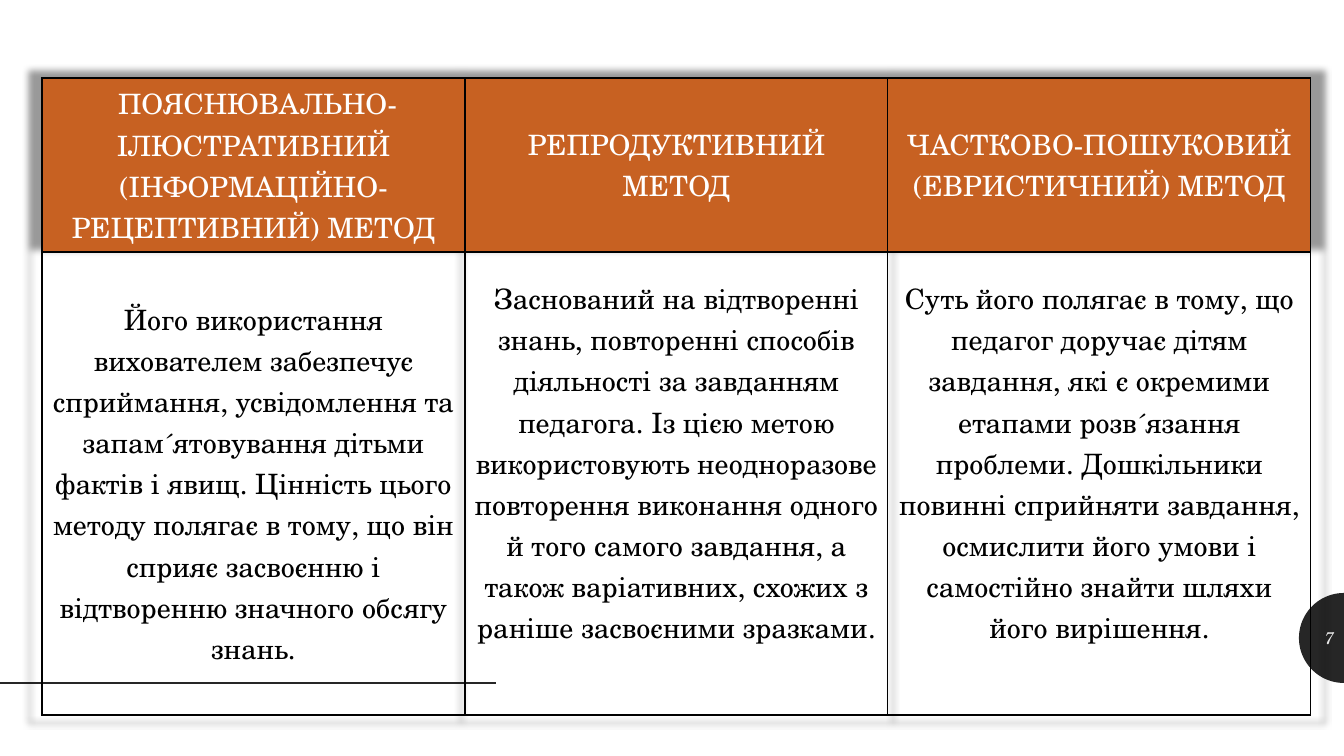
"""Build a slide with a table that compares three teaching methods."""
import math

import pptx
import pptx.chart.data
import pptx.dml.color
import pptx.enum.text
import pptx.oxml
import pptx.oxml.ns
import pptx.util

RGB = pptx.dml.color.RGBColor
ORANGE = RGB(0xC7, 0x61, 0x22)
DARK = RGB(0x26, 0x26, 0x26)
BLACK = RGB(0, 0, 0)
WHITE = RGB(0xFF, 0xFF, 0xFF)
PALE = RGB(0xF5, 0xF5, 0xF5)
FONT = "TeX Gyre Schola"
ALIGN = pptx.enum.text.PP_ALIGN
MIDDLE = pptx.enum.text.MSO_ANCHOR.MIDDLE
NS = pptx.oxml.ns.nsdecls("a")


def px(length):
    """Turn pixels into EMU."""
    return pptx.util.Emu(round(length * 12192000 / 1344))


def write(frame, text, align, size, color, italic=False):
    """Fill a text frame with one formatted paragraph."""
    frame.text = text
    paragraph = frame.paragraphs[0]
    paragraph.alignment = align
    font = paragraph.runs[0].font
    font.name, font.size = FONT, pptx.util.Pt(size)
    font.bold, font.italic = False, italic
    font.color.rgb = color


METHODS = [
    (" ПОЯСНЮВАЛЬНО-ІЛЮСТРАТИВНИЙ (ІНФОРМАЦІЙНО-РЕЦЕПТИВНИЙ) МЕТОД",
     "Його використання вихователем забезпечує сприймання, усвідомлення та "
     "запам´ятовування дітьми фактів і явищ. Цінність цього методу полягає в тому, "
     "що він сприяє засвоєнню і відтворенню значного обсягу знань.", 5),
    ("РЕПРОДУКТИВНИЙ МЕТОД",
     "Заснований на відтворенні знань, повторенні способів діяльності за завданням "
     "педагога. Із цією метою використовують неодноразове повторення виконання "
     "одного й того самого завдання, а також варіативних, схожих з раніше "
     "засвоєними зразками.", 46),
    ("ЧАСТКОВО-ПОШУКОВИЙ (ЕВРИСТИЧНИЙ) МЕТОД",
     "Суть його полягає в тому, що педагог доручає дітям завдання, які є окремими "
     "етапами розв´язання проблеми. Дошкільники повинні сприйняти завдання, "
     "осмислити його умови і самостійно знайти шляхи його вирішення.", 46),
]

deck = pptx.Presentation()
deck.slide_width, deck.slide_height = px(1344), px(756)
slide = deck.slides.add_slide(deck.slide_layouts[6])
shapes = slide.shapes

arc = [(px(1344 - 45 * math.sin(math.radians(angle))),
        px(638 - 45 * math.cos(math.radians(angle)))) for angle in range(0, 181, 4)]
outline = shapes.build_freeform(*arc[0])
outline.add_line_segments(arc[1:], close=True)
badge = outline.convert_to_shape()
badge.shadow.inherit = False
badge.fill.solid()
badge.fill.fore_color.rgb = DARK
badge.line.fill.background()

rule = shapes.add_connector(pptx.enum.shapes.MSO_CONNECTOR.STRAIGHT,
                            0, px(683), px(496), px(683))
rule.line.color.rgb = DARK
rule.line.width = pptx.util.Pt(2)
rule._element.spPr.append(pptx.oxml.parse_xml(f"<a:effectLst {NS}/>"))

page_number = shapes.add_textbox(px(1299), px(618), px(45), px(40)).text_frame
page_number.word_wrap = True
page_number.vertical_anchor = MIDDLE
write(page_number, "7", ALIGN.RIGHT, 12, PALE, italic=True)

methods = shapes.add_table(2, 3, px(42), px(78), px(1269), px(637)).table
methods.first_row = methods.horz_banding = False
methods.rows[0].height, methods.rows[1].height = px(174), px(463)
methods._tbl.tblPr.insert(0, pptx.oxml.parse_xml(
    f'<a:effectLst {NS}><a:outerShdw blurRad="63500" sx="102000" sy="102000" '
    'algn="ctr" rotWithShape="0"><a:srgbClr val="000000"><a:alpha val="40000"/>'
    '</a:srgbClr></a:outerShdw></a:effectLst>'))

for column, (heading, description, bottom) in enumerate(METHODS):
    methods.columns[column].width = px(423)
    head, body = methods.cell(0, column), methods.cell(1, column)
    write(head.text_frame, heading, ALIGN.CENTER, 20, WHITE)
    write(body.text_frame, description, ALIGN.CENTER, 20, BLACK)
    for cell in (head, body):
        cell.vertical_anchor = MIDDLE
        cell.margin_left = cell.margin_right = px(9)
        cell.margin_top = cell.margin_bottom = px(5)
        for side in ("lnL", "lnR", "lnT", "lnB"):
            cell._tc.get_or_add_tcPr().append(pptx.oxml.parse_xml(
                f'<a:{side} {NS} w="12700"><a:solidFill><a:srgbClr val="{BLACK}"/>'
                f'</a:solidFill></a:{side}>'))
    head.fill.solid()
    head.fill.fore_color.rgb = ORANGE
    body.fill.background()
    body.margin_bottom = px(bottom)

deck.save("out.pptx")
